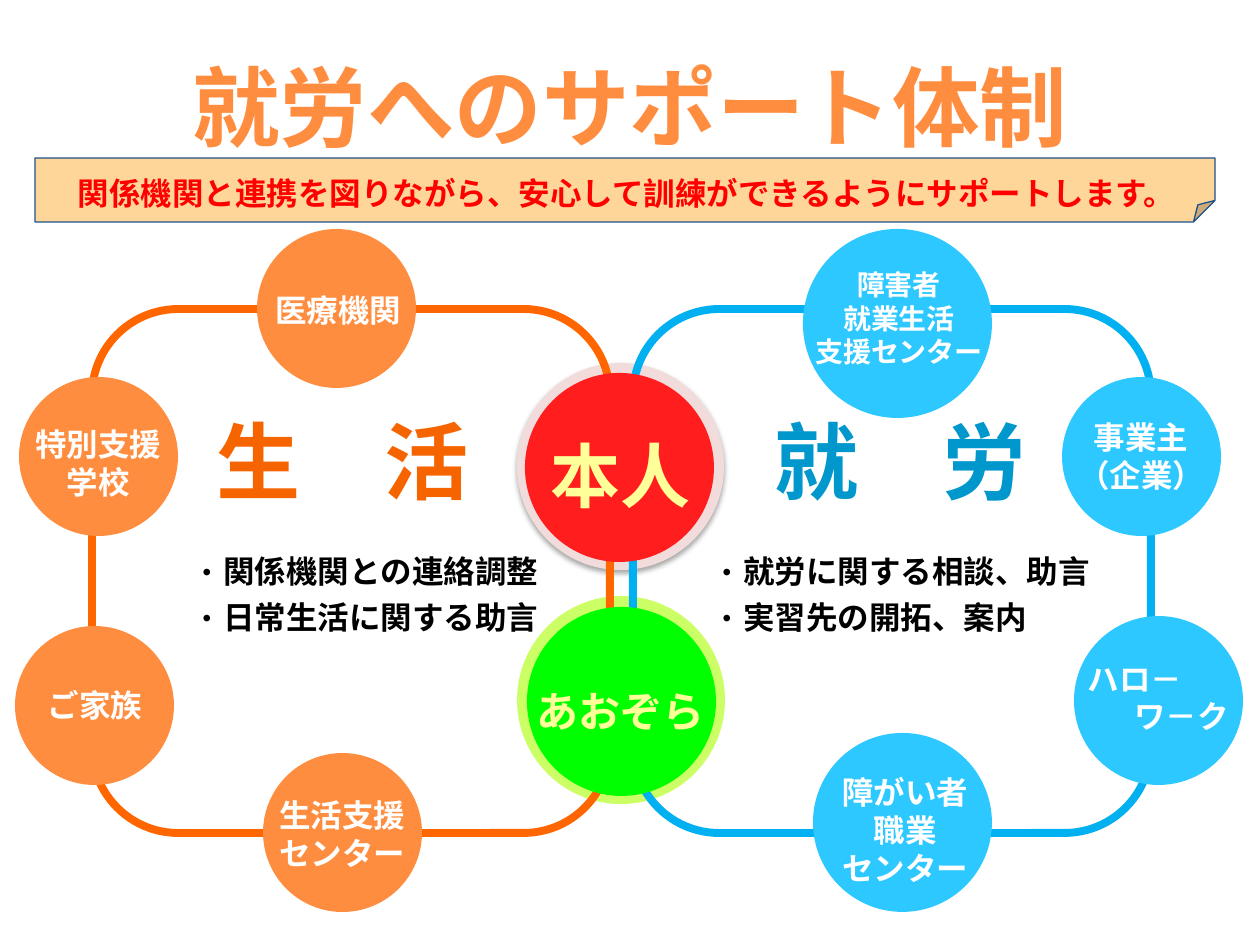
from lxml.etree import SubElement
from pptx import Presentation
from pptx.dml.color import RGBColor
from pptx.enum.shapes import MSO_SHAPE
from pptx.enum.text import MSO_ANCHOR, PP_ALIGN
from pptx.oxml.ns import qn
from pptx.util import Emu, Pt

SCALE = 914400 / 126
SANS = "Noto Sans CJK JP"
WHITE = RGBColor(0xFF, 0xFF, 0xFF)
BLACK = RGBColor(0, 0, 0)
RED = RGBColor(0xFF, 0x1D, 0x1D)
ALERT = RGBColor(0xFF, 0, 0)
ROSE = RGBColor(0xF2, 0xDC, 0xDB)
GREEN = RGBColor(0, 0xFF, 0)
LIME = RGBColor(0xCC, 0xFF, 0x66)
YELLOW = RGBColor(0xFF, 0xFF, 0x99)
ORANGE = RGBColor(0xFF, 0x8D, 0x3F)
EMBER = RGBColor(0xFF, 0x66, 0)
RUST = RGBColor(0xF6, 0x64, 0)
BLUE = RGBColor(0x2D, 0xC8, 0xFF)
AZURE = RGBColor(0, 0xB0, 0xF0)
OCEAN = RGBColor(0, 0x97, 0xCC)
SAND = RGBColor(0xFF, 0xD6, 0x99)
NAVY = RGBColor(0x1D, 0x52, 0x8D)

deck = Presentation()
deck.slide_width, deck.slide_height = Emu(9144000), Emu(6858000)
slide = deck.slides.add_slide(deck.slide_layouts[6])


def draw(kind, box, fill=None, line=None, width=0):
    shape = slide.shapes.add_shape(kind, *[Emu(round(n * SCALE)) for n in box])
    shape.shadow.inherit = False
    if fill:
        shape.fill.solid()
        shape.fill.fore_color.rgb = fill
    else:
        shape.fill.background()
    if line:
        shape.line.color.rgb = line
        shape.line.width = Pt(width)
    else:
        shape.line.fill.background()
    return shape


def write(box, lines, size, color, face=SANS, aligns=None, bullet=False):
    frame = slide.shapes.add_textbox(
        *[Emu(round(n * SCALE)) for n in box]).text_frame
    frame.word_wrap = True
    frame.vertical_anchor = MSO_ANCHOR.MIDDLE
    frame.margin_left = frame.margin_right = 0
    frame.margin_top = frame.margin_bottom = 0
    frame.text = "\n".join(lines)
    for i, para in enumerate(frame.paragraphs):
        para.alignment = aligns[i] if aligns else PP_ALIGN.CENTER
        if bullet:
            props = para._p.get_or_add_pPr()
            props.set("marL", str(Pt(18)))
            props.set("indent", str(-Pt(18)))
            if i:
                para.space_before = Pt(4.5)
            SubElement(props, qn("a:buFont"), typeface=SANS)
            SubElement(props, qn("a:buChar"), char="・")
        font = para.font
        font.name, font.size, font.bold = face, Pt(size), True
        font.color.rgb = color


# Halos behind the two centre circles
draw(MSO_SHAPE.OVAL, (517, 596, 208, 208), LIME)
halo = draw(MSO_SHAPE.OVAL, (517, 363, 207, 207), ROSE)
effect = halo._element.spPr.find(qn("a:effectLst"))
shade = SubElement(effect, qn("a:outerShdw"), blurRad=str(Pt(3.1)),
                   dist=str(Pt(1.8)), dir="5400000", rotWithShape="0")
tone = SubElement(shade, qn("a:srgbClr"), val="000000")
SubElement(tone, qn("a:alpha"), val="35000")

# Title
write((0, 38, 1260, 136), ["就労へのサポート体制"], 50, ORANGE, "Roboto")

# Loops of work and daily life
for left, color in ((633, AZURE), (92, EMBER)):
    draw(MSO_SHAPE.ROUNDED_RECTANGLE, (left, 309, 518, 524),
         line=color, width=4.5)

# Partners: left, top, width of circle, fill, label centre, size, lines
partners = [
    (813, 733, 179, BLUE, 905, 830, 18, ["障がい者", "職業", "センター"]),
    (1062, 377, 159, BLUE, 1141, 456, 18, ["事業主", "（企業）"]),
    (803, 229, 189, BLUE, 899, 318, 16, ["障害者", "就業生活", "支援センター"]),
    (263, 753, 159, ORANGE, 342, 834, 18, ["生活支援", "センター"]),
    (19, 377, 159, ORANGE, 98, 463, 18, ["特別支援", "学校"]),
    (15, 626, 159, ORANGE, 95, 705, 18, ["ご家族"]),
    (257, 229, 159, ORANGE, 338, 310, 18, ["医療機関"]),
    (525, 373, 189, RED, 620, 474, 40, ["本人"]),
    (527, 607, 189, GREEN, 621, 711, 24, ["あおぞら"]),
]
for left, top, wide, fill, x, y, size, lines in partners:
    draw(MSO_SHAPE.OVAL, (left, top, wide, wide), fill)
    color = YELLOW if size > 18 else WHITE
    write((x - 104, y - 60, 208, 120), lines, size, color)

# Job office, with its two words staggered
draw(MSO_SHAPE.OVAL, (1074, 616, 169, 169), BLUE)
write((1088, 653, 141, 89), ["ハロ－", "ワ－ク"], 18, WHITE,
      aligns=[PP_ALIGN.LEFT, PP_ALIGN.RIGHT])

# Field headings and their tasks
write((202, 402, 281, 115), ["生　活"], 48, RUST)
write((760, 402, 281, 115), ["就　労"], 48, OCEAN)
tasks = [
    (192, ["関係機関との連絡調整", "日常生活に関する助言"]),
    (712, ["就労に関する相談、助言", "実習先の開拓、案内"]),
]
for left, lines in tasks:
    write((left, 546, 390, 96), lines, 18, BLACK,
          aligns=[PP_ALIGN.LEFT] * 2, bullet=True)

# Banner
note = draw(MSO_SHAPE.FOLDED_CORNER, (35, 158, 1180, 64), SAND, NAVY, 0.75)
guides = note._element.spPr.find(qn("a:prstGeom")).get_or_add_avLst()
SubElement(guides, qn("a:gd"), name="adj", fmla="val 33500")
write((42, 168, 1169, 50),
      ["関係機関と連携を図りながら、安心して訓練ができるようにサポートします。"],
      18, ALERT)

deck.save("out.pptx")
